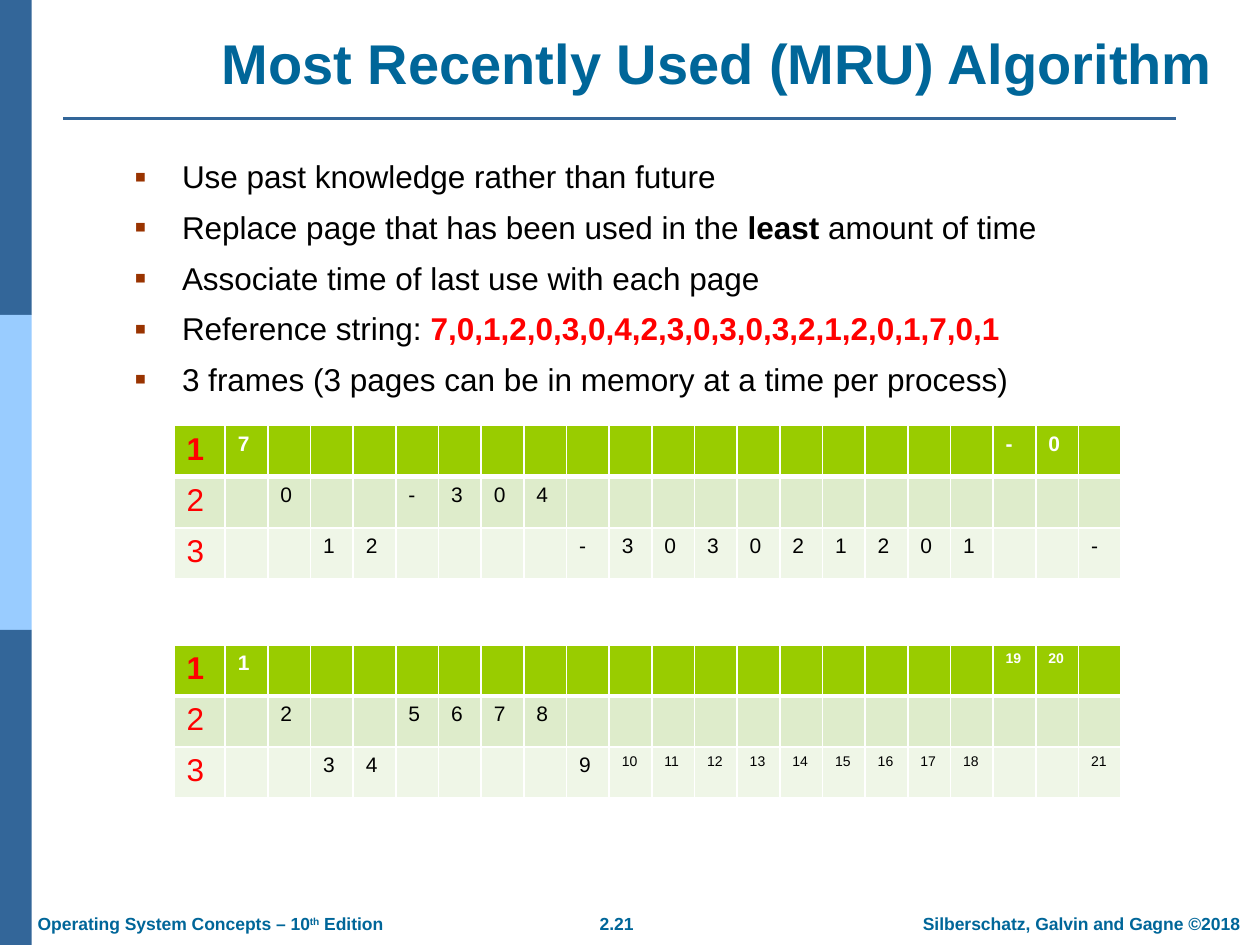
"""Build the slide on the Most Recently Used page replacement algorithm."""
import lxml.etree
import pptx
import pptx.dml.color
import pptx.enum.shapes
import pptx.enum.text
import pptx.oxml
import pptx.oxml.ns
import pptx.util

Cm = pptx.util.Cm
Pt = pptx.util.Pt
ALIGN = pptx.enum.text.PP_ALIGN
ANCHOR = pptx.enum.text.MSO_ANCHOR
SHAPE = pptx.enum.shapes.MSO_SHAPE
qn = pptx.oxml.ns.qn
NS = pptx.oxml.ns.nsdecls("a")


def rgb(color):
    return pptx.dml.color.RGBColor.from_string(color)


def style(r, size, color, bold=False):
    r.font.name = "Arial"
    r.font.size = Pt(size)
    r.font.bold = bold
    r.font.color.rgb = rgb(color)


prs = pptx.Presentation()
prs.slide_width = Cm(25.4)
prs.slide_height = Cm(19.05)
s = prs.slides.add_slide(prs.slide_layouts[6])

band_height = 6.35
for i, color in enumerate(["336699", "99CCFF", "336699"]):
    band = s.shapes.add_shape(SHAPE.RECTANGLE, Cm(0), Cm(i * band_height), Cm(0.64), Cm(band_height))
    band.shadow.inherit = False
    band.fill.solid()
    band.fill.fore_color.rgb = rgb(color)
    band.line.fill.background()

rule = s.shapes.add_connector(pptx.enum.shapes.MSO_CONNECTOR.STRAIGHT, Cm(1.27), Cm(2.39), Cm(23.7), Cm(2.39))
rule.line.color.rgb = rgb("336699")
rule.line.width = Pt(1.5)
lxml.etree.SubElement(rule._element.spPr, qn("a:effectLst"))

labels = [
    (3.81, 0.46, 21.31, 1.6, ["Most Recently Used (MRU) Algorithm"], 32, ALIGN.CENTER, True),
    (11.81, 18.29, 1.24, 0.69, ["2.21"], 10, ALIGN.CENTER, False),
    (18.03, 18.29, 7.54, 0.69, ["Silberschatz, Galvin and Gagne ©2018"], 10, ALIGN.CENTER, True),
    (0.51, 18.29, 7.59, 0.69, ["Operating System Concepts – 10", "th", " Edition"], 10, ALIGN.LEFT, False),
]
for left, top, width, height, texts, size, align, wrap in labels:
    tf = s.shapes.add_textbox(Cm(left), Cm(top), Cm(width), Cm(height)).text_frame
    tf.word_wrap = wrap
    tf.vertical_anchor = ANCHOR.BOTTOM if size == 32 else ANCHOR.TOP
    p = tf.paragraphs[0]
    p.alignment = align
    for text in texts:
        r = p.add_run()
        r.text = text
        style(r, size, "006699", True)
        if text == "th":
            r._r.get_or_add_rPr().set("baseline", "30000")

bullets = [
    [("Use past knowledge rather than future", "000000", False)],
    [("Replace page that has been used in the ", "000000", False),
     ("least", "000000", True),
     (" amount of time", "000000", False)],
    [("Associate time of last use with each page", "000000", False)],
    [("Reference string: ", "000000", False),
     ("7,0,1,2,0,3,0,4,2,3,0,3,0,3,2,1,2,0,1,7,0,1", "FF0000", True)],
    [("3 frames (3 pages can be in memory at a time per process)", "000000", False)],
]
tf = s.shapes.add_textbox(Cm(2.46), Cm(3.05), Cm(20.7), Cm(12.4)).text_frame
tf.word_wrap = True
for i, runs in enumerate(bullets):
    p = tf.add_paragraph() if i else tf.paragraphs[0]
    pPr = p._p.get_or_add_pPr()
    pPr.set("marL", str(Cm(0.96)))
    pPr.set("indent", str(-Cm(0.96)))
    for xml in (f'<a:buClr {NS}><a:srgbClr val="993300"/></a:buClr>',
                f'<a:buSzPct {NS} val="110000"/>',
                f'<a:buFont {NS} typeface="Arial"/>',
                f'<a:buChar {NS} char="▪"/>'):
        pPr.append(pptx.oxml.parse_xml(xml))
    if i:
        p.space_before = Pt(7.3)
    for text, color, bold in runs:
        r = p.add_run()
        r.text = text
        style(r, 18, color, bold)

frames = [int(f) for f in "123322223333333333113"]
pages = list("7012-304-303021201-0-")
steps = [str(n + 1) for n in range(len(frames))]
fills = ["99CC00", "DEECCB", "EFF6E7"]
for top, values in [(13.0, steps), (8.58, pages)]:
    table = s.shapes.add_table(3, len(frames) + 1, Cm(3.51), Cm(top), Cm(19.09), Cm(3.09)).table
    table.horz_banding = False
    for c, column in enumerate(table.columns):
        column.width = Cm(0.86 if c else 1.03)
    for row, fill in enumerate(fills):
        table.rows[row].height = Cm(1.03)
        for c in range(len(frames) + 1):
            cell = table.cell(row, c)
            cell.fill.solid()
            cell.fill.fore_color.rgb = rgb(fill)
            tcPr = cell._tc.get_or_add_tcPr()
            widths = {"L": 1, "R": 1, "T": 3 if row == 1 else 1, "B": 3 if row == 0 else 1}
            for n, (side, width) in enumerate(widths.items()):
                tcPr.insert(n, pptx.oxml.parse_xml(
                    f'<a:ln{side} {NS} w="{Pt(width)}"><a:solidFill>'
                    f'<a:srgbClr val="FFFFFF"/></a:solidFill></a:ln{side}>'))
            if c == 0:
                text, size, color = str(row + 1), 18, "FF0000"
            elif frames[c - 1] == row + 1:
                text = values[c - 1]
                size = 8 if len(text) > 1 else 12
                color = "000000" if row else "FFFFFF"
            else:
                continue
            cell.text_frame.text = text
            style(cell.text_frame.paragraphs[0].runs[0], size, color, row == 0)

prs.save("out.pptx")
